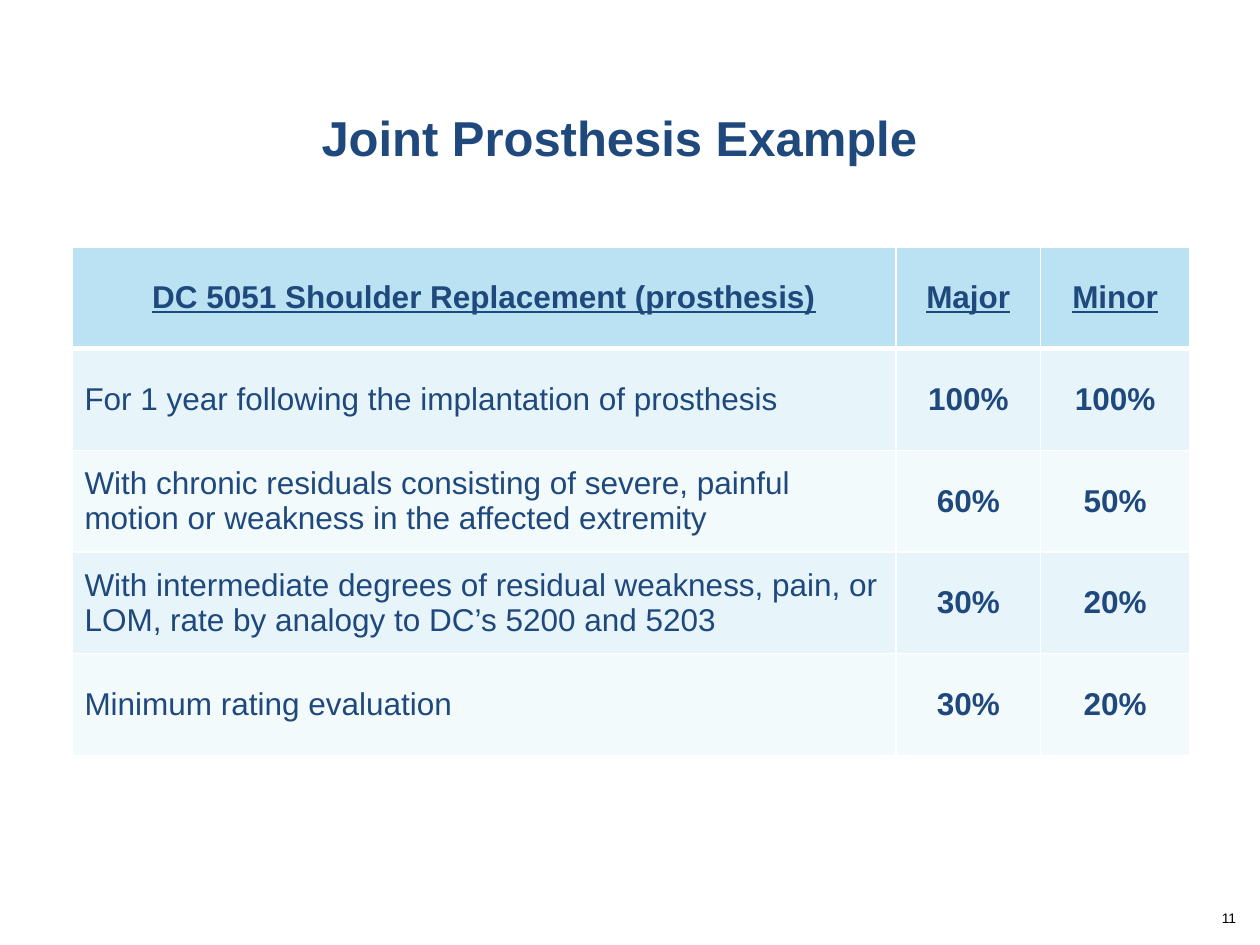
from dataclasses import dataclass

from lxml import etree
from pptx import Presentation
from pptx.dml.color import RGBColor
from pptx.enum import text
from pptx.oxml.ns import qn
from pptx.util import Cm, Length, Pt


@dataclass(frozen=True)
class Theme:
    font: str = "Arial"
    navy: str = "1F497D"
    black: str = "000000"
    border: str = "FFFFFF"
    header_fill: str = "BBE2F2"
    band_fills: tuple[str, str] = ("E7F4FA", "F3FAFC")
    title_size: float = 28
    table_size: float = 18
    number_size: float = 7.9
    thin_border: float = 1
    header_border: float = 3


@dataclass(frozen=True)
class Rating:
    criterion: str
    major: str
    minor: str


@dataclass(frozen=True)
class Box:
    left: Length
    top: Length
    width: Length
    height: Length


THEME = Theme()
HEADER = Rating("DC 5051 Shoulder Replacement (prosthesis)", "Major", "Minor")
RATINGS = [
    Rating("For 1 year following the implantation of prosthesis", "100%", "100%"),
    Rating("With chronic residuals consisting of severe, painful motion or "
           "weakness in the affected extremity", "60%", "50%"),
    Rating("With intermediate degrees of residual weakness, pain, or LOM, "
           "rate by analogy to DC’s 5200 and 5203", "30%", "20%"),
    Rating("Minimum rating evaluation", "30%", "20%"),
]
COLUMN_WIDTHS = [Cm(16.61), Cm(2.92), Cm(3)]
ROW_HEIGHT = Cm(2.05)


def write(frame, content: str, size: float, color: str, align,
          bold: bool = False, underline: bool = False) -> None:
    paragraph = frame.paragraphs[0]
    paragraph.alignment = align
    run = paragraph.add_run()
    run.text = content
    run.font.name = THEME.font
    run.font.size = Pt(size)
    run.font.bold = bold
    run.font.underline = underline
    run.font.color.rgb = RGBColor.from_string(color)


def add_text(slide, box: Box, anchor, content: str, size: float, color: str,
             align, bold: bool = False):
    frame = slide.shapes.add_textbox(box.left, box.top, box.width, box.height).text_frame
    frame.word_wrap = True
    frame.vertical_anchor = anchor
    write(frame, content, size, color, align, bold)
    return frame


def set_borders(cell, top: float, bottom: float) -> None:
    """Draw the four cell edges; call before the cell gets its fill."""
    properties = cell._tc.get_or_add_tcPr()
    thin = THEME.thin_border
    for edge, width in (("lnL", thin), ("lnR", thin), ("lnT", top), ("lnB", bottom)):
        line = etree.SubElement(properties, qn(f"a:{edge}"), w=str(Pt(width)))
        fill = etree.SubElement(line, qn("a:solidFill"))
        etree.SubElement(fill, qn("a:srgbClr"), val=THEME.border)


def add_rating_table(slide, left: Length, top: Length) -> None:
    rows = [HEADER, *RATINGS]
    table = slide.shapes.add_table(
        len(rows), len(COLUMN_WIDTHS), left, top,
        Length(sum(COLUMN_WIDTHS)), Length(ROW_HEIGHT * len(rows))).table
    for column, width in zip(table.columns, COLUMN_WIDTHS):
        column.width = width
    for r, rating in enumerate(rows):
        table.rows[r].height = ROW_HEIGHT
        is_header = r == 0
        fill = THEME.header_fill if is_header else THEME.band_fills[(r - 1) % 2]
        top_border = THEME.header_border if r == 1 else THEME.thin_border
        bottom_border = THEME.header_border if is_header else THEME.thin_border
        for c, content in enumerate((rating.criterion, rating.major, rating.minor)):
            cell = table.cell(r, c)
            set_borders(cell, top_border, bottom_border)
            cell.fill.solid()
            cell.fill.fore_color.rgb = RGBColor.from_string(fill)
            cell.vertical_anchor = text.MSO_ANCHOR.MIDDLE
            emphasized = is_header or c > 0
            align = text.PP_ALIGN.CENTER if emphasized else text.PP_ALIGN.LEFT
            write(cell.text_frame, content, THEME.table_size, THEME.navy, align,
                  bold=emphasized, underline=is_header)


def main() -> None:
    presentation = Presentation()
    presentation.slide_width = Cm(25.4)
    presentation.slide_height = Cm(19.05)
    slide = presentation.slides.add_slide(presentation.slide_layouts[6])

    add_text(slide, Box(Cm(0), Cm(1.27), Cm(24.97), Cm(2.97)), text.MSO_ANCHOR.MIDDLE,
             "Joint Prosthesis Example", THEME.title_size, THEME.navy,
             text.PP_ALIGN.CENTER, bold=True)
    number = add_text(slide, Box(Cm(19.25), Cm(18.34), Cm(5.92), Cm(1.02)),
                      text.MSO_ANCHOR.TOP, "11", THEME.number_size, THEME.black,
                      text.PP_ALIGN.RIGHT)
    number.margin_top = Cm(0)
    add_rating_table(slide, Cm(1.45), Cm(4.98))

    presentation.save("out.pptx")


if __name__ == "__main__":
    main()
